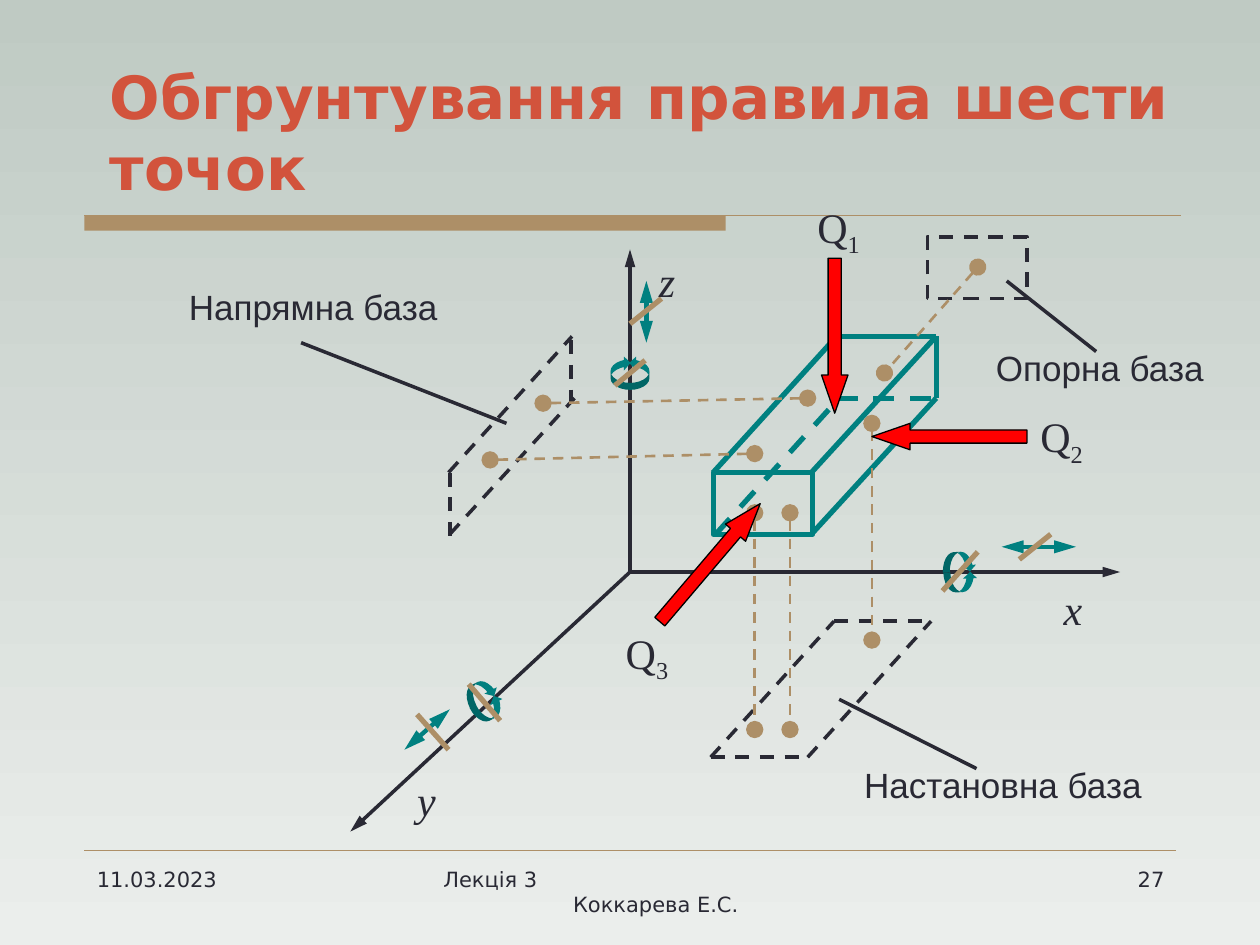
"""Build the slide on the six-point rule with its axes, bases and clamping forces."""
from pptx import Presentation
from pptx import util as u
from pptx.dml import color
from pptx.enum import dml, shapes, text
from pptx.oxml import ns, xmlchemy

INK, TEAL, TAN, RED, RUST = "292934", "008080", "AD8F67", "FF0000", "D2533C"
ALIGN = text.PP_ALIGN


def add_line(ends, hue, width, dashed=False, head=None, tail=None):
    line = page.shapes.add_connector(
        shapes.MSO_CONNECTOR.STRAIGHT, *[u.Inches(value) for value in ends])
    line.line.color.rgb = color.RGBColor.from_string(hue)
    line.line.width = u.Pt(width)
    if dashed:
        line.line.dash_style = dml.MSO_LINE.DASH
    for name, kind in (("a:headEnd", head), ("a:tailEnd", tail)):
        if kind:
            end = xmlchemy.OxmlElement(name)
            end.set("type", kind)
            end.set("w", "lg" if kind == "oval" else "med")
            end.set("len", "lg")
            line.line._get_or_add_ln().append(end)
    line._element.spPr.append(xmlchemy.OxmlElement("a:effectLst"))


def add_shape(kind, frame, fill=None, edge=None, width=0.75, adjust=(), turn=0):
    shape = page.shapes.add_shape(kind, *[u.Inches(value) for value in frame])
    shape.shadow.inherit = False
    shape.rotation = turn
    for index, value in enumerate(adjust):
        shape.adjustments[index] = value
    for part, hue in ((shape.fill, fill), (shape.line.fill, edge)):
        if hue:
            part.solid()
            part.fore_color.rgb = color.RGBColor.from_string(hue)
        else:
            part.background()
    if edge:
        shape.line.width = u.Pt(width)
    return shape


deck = Presentation()
deck.slide_width, deck.slide_height = u.Inches(10), u.Inches(7.5)
page = deck.slides.add_slide(deck.slide_layouts[5])
backdrop = page.background.fill
backdrop.gradient()
backdrop.gradient_angle = 270
for stop, hue in zip(backdrop.gradient_stops, ("BFCAC3", "EBEEEC")):
    stop.color.rgb = color.RGBColor.from_string(hue)

add_shape(shapes.MSO_SHAPE.RECTANGLE, (0.67, 1.71, 5.09, 0.12), TAN)
add_line((0.67, 1.71, 9.37, 1.71), TAN, 0.75)
add_line((0.67, 6.75, 9.33, 6.75), TAN, 0.25)

title = page.shapes.title
title.left, title.top = u.Inches(0.77), u.Inches(0.33)
title.width, title.height = u.Inches(8.75), u.Inches(1.33)
title.text_frame.text = "Обгрунтування правила шести точок"
title.text_frame.auto_size = text.MSO_AUTO_SIZE.NONE
title.text_frame.vertical_anchor = text.MSO_ANCHOR.BOTTOM
heading = title.text_frame.paragraphs[0]
heading.alignment = ALIGN.LEFT
heading.font.name, heading.font.size, heading.font.bold = "DejaVu Sans", u.Pt(34), True
heading.font.color.rgb = color.RGBColor.from_string(RUST)

for axis_end in ((5, 1.98), (8.89, 4.54), (2.78, 6.6)):
    add_line((5, 4.54, *axis_end), INK, 2, tail="triangle")

add_shape(shapes.MSO_SHAPE.RECTANGLE, (5.66, 3.75, 0.79, 0.49), edge=TEAL, width=3)
for ends, dashed in (
    ((5.66, 3.75, 6.64, 2.67), False),
    ((5.68, 4.24, 6.66, 3.16), True),
    ((6.44, 3.75, 7.43, 2.67), False),
    ((6.44, 4.24, 7.43, 3.16), False),
    ((7.43, 2.67, 7.43, 3.16), False),
    ((6.64, 2.67, 6.64, 3.16), True),
    ((6.64, 2.67, 7.43, 2.67), False),
    ((6.64, 3.16, 7.43, 3.16), True),
):
    add_line(ends, TEAL, 3, dashed)

setting_base = ((5.64, 6.01, 6.62, 4.93), (6.41, 6.01, 7.39, 4.93),
                (5.64, 6.01, 6.41, 6.01), (6.62, 4.93, 7.39, 4.93))
guide_base = ((3.56, 3.75, 4.54, 2.67), (3.57, 4.24, 4.56, 3.16),
              (3.57, 3.75, 3.57, 4.26), (4.53, 2.7, 4.53, 3.21))
for ends in setting_base + guide_base:
    add_line(ends, INK, 2, True)
support_base = add_shape(
    shapes.MSO_SHAPE.RECTANGLE, (7.36, 1.88, 0.79, 0.49), edge=INK, width=2)
support_base.line.dash_style = dml.MSO_LINE.DASH

for ends in ((5.99, 4.07, 5.99, 5.79), (6.27, 4.07, 6.27, 5.79),
             (6.92, 3.36, 6.92, 5.08), (7.76, 2.12, 7.02, 2.96),
             (4.31, 3.2, 6.41, 3.16), (3.89, 3.65, 5.99, 3.6)):
    add_line(ends, TAN, 1.5, True, "oval", "oval")

for ends in ((3.21, 5.95, 3.57, 5.63), (7.95, 4.34, 8.54, 4.34), (5.13, 2.72, 5.13, 2.23)):
    add_line(ends, TEAL, 2.5, head="triangle", tail="triangle")

for turn, *corners in ((333, (3.75, 5.55), (3.68, 5.41)),
                       (270, (4.94, 2.88), (4.79, 2.88)),
                       (357.7, (7.49, 4.54), (7.48, 4.38))):
    for corner, flipped in zip(corners, (False, True)):
        curl = add_shape(shapes.MSO_SHAPE.CURVED_UP_ARROW, (*corner, 0.27, 0.16), TEAL,
                         adjust=(0.347, 0.693, 0.333), turn=turn)
        if flipped:
            curl._element.spPr.find(ns.qn("a:xfrm")).set("flipV", "1")

for left, top, turn in ((7.43, 2.85, 90), (5.53, 3.85, 220.4), (6.52, 2.05, 0)):
    add_shape(shapes.MSO_SHAPE.DOWN_ARROW, (left, top, 0.21, 1.23), RED, "000000",
              adjust=(0.5, 1.441), turn=turn)

for ends in ((6.66, 5.55, 7.75, 6.1), (2.39, 2.72, 4.02, 3.36), (7.99, 2.23, 8.7, 2.79)):
    add_line(ends, INK, 2)
for ends in ((5, 2.57, 5.25, 2.37), (3.72, 5.43, 3.97, 5.72), (7.48, 4.69, 7.76, 4.38),
             (8.09, 4.44, 8.34, 4.24), (4.88, 3.06, 5.12, 2.86), (3.31, 5.67, 3.56, 5.95)):
    add_line(ends, TAN, 3)

serif, sans, small = ("Times New Roman", 24), ("Arial", 20), ("DejaVu Sans", 12)
for words, frame, (face, size), align in (
    ("x", (8.34, 4.58, 0.35, 0.5), serif, ALIGN.CENTER),
    ("y", (3.21, 6.1, 0.35, 0.5), serif, ALIGN.CENTER),
    ("z", (5.13, 1.98, 0.33, 0.5), serif, ALIGN.CENTER),
    ("Q1", (6.38, 1.55, 0.55, 0.5), serif, ALIGN.CENTER),
    ("Q2", (8.15, 3.21, 0.55, 0.5), serif, ALIGN.CENTER),
    ("Q3", (4.86, 4.93, 0.55, 0.5), serif, ALIGN.CENTER),
    ("Настановна база", (6.75, 6.01, 2.42, 0.44), sans, ALIGN.CENTER),
    ("Напрямна база", (1.39, 2.22, 2.19, 0.44), sans, ALIGN.CENTER),
    ("Опорна база", (7.8, 2.7, 1.86, 0.44), sans, ALIGN.CENTER),
    ("11.03.2023", (0.67, 6.83, 2.17, 0.52), small, ALIGN.LEFT),
    ("Лекція 3\nКоккарева Е.С.", (3.42, 6.83, 3.17, 0.52), small, ALIGN.LEFT),
    ("27", (7.17, 6.83, 2.17, 0.52), small, ALIGN.RIGHT),
):
    box = page.shapes.add_textbox(*[u.Inches(value) for value in frame])
    box.text_frame.word_wrap = size == 12
    box.text_frame.text = words
    for para in box.text_frame.paragraphs:
        para.alignment = align
        para.font.name, para.font.size = face, u.Pt(size)
        para.font.italic = words in "xyz"
        para.font.color.rgb = color.RGBColor.from_string(INK)
    if words.startswith("Q"):
        para.runs[0].text = "Q"
        span = para.add_run()
        span.text = words[1]
        span.font._element.set("baseline", "-25000")
    if "\n" in words:
        para.alignment = ALIGN.CENTER
        para._p.get_or_add_pPr().set("marL", str(u.Inches(0.4)))

deck.save("out.pptx")
